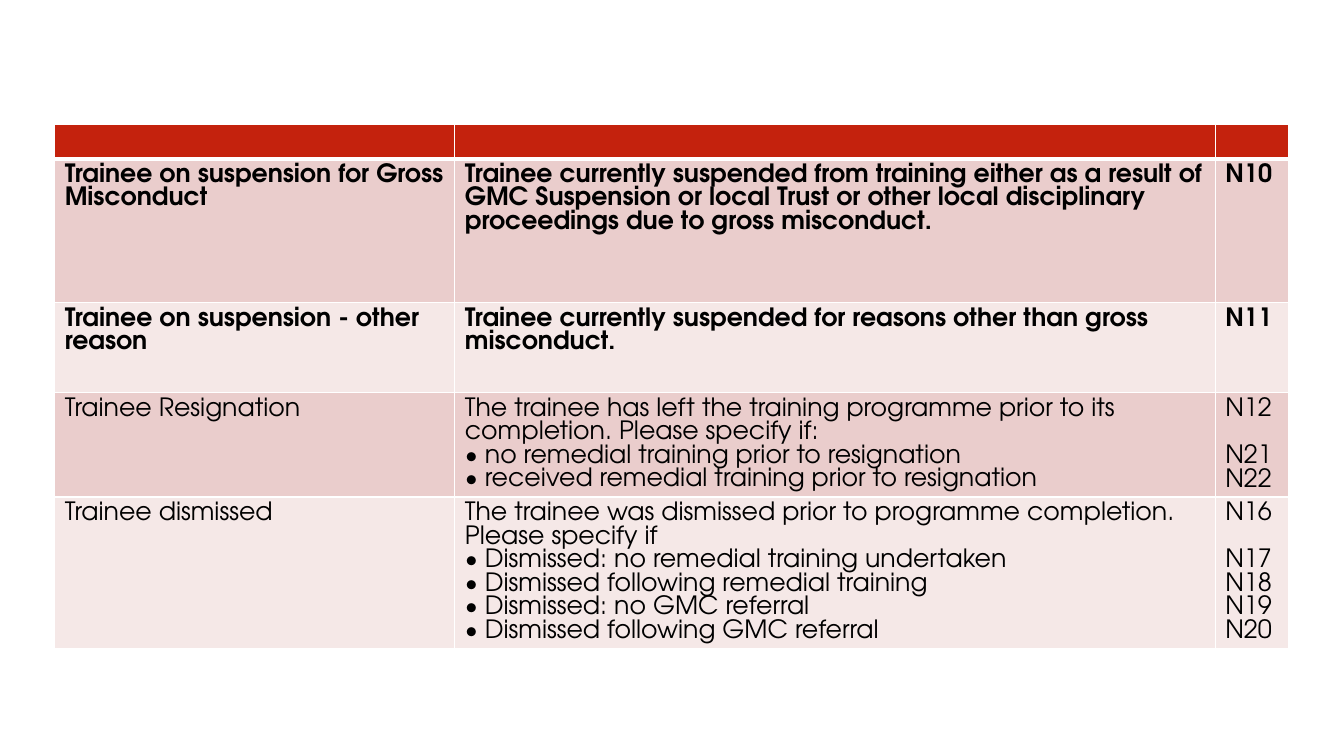
from pptx import Presentation
from pptx.dml.color import RGBColor
from pptx.oxml.ns import qn
from pptx.util import Pt
from lxml.etree import SubElement

HEADER_RED = RGBColor(0xC4, 0x22, 0x0D)
BANDS = [RGBColor(0xEA, 0xCD, 0xCC), RGBColor(0xF5, 0xE8, 0xE7)]
BLACK = RGBColor(0, 0, 0)
WHITE = RGBColor(0xFF, 0xFF, 0xFF)
FONT = "TeX Gyre Adventor"
FONT_SIZE = 18
LINE_HEIGHT = 16.9
BULLET_INDENT = 14.3

COLUMN_WIDTHS = [285.8, 543.2, 52.6]
HEADER_HEIGHT = 24.2
# height, bold, status, description, bullets, code, codes of the bullets
STATUSES = [
    (102.8, True, "Trainee on suspension for Gross Misconduct",
     "Trainee currently suspended from training either as a result of GMC Suspension "
     "or local Trust or other local disciplinary proceedings due to gross misconduct.",
     [], "N10", ""),
    (64.3, True, "Trainee on suspension - other reason",
     "Trainee currently suspended for reasons other than gross misconduct.",
     [], "N11", ""),
    (74.6, False, "Trainee Resignation",
     "The trainee has left the training programme prior to its completion. "
     "Please specify if:",
     ["no remedial training prior to resignation",
      "received remedial training prior to resignation"], "N12", "N21 N22"),
    (107.2, False, "Trainee dismissed",
     "The trainee was dismissed prior to programme completion. Please specify if",
     ["Dismissed: no remedial training undertaken",
      "Dismissed following remedial training",
      "Dismissed: no GMC referral",
      "Dismissed following GMC referral"], "N16", "N17 N18 N19 N20"),
]


def style_cell(cell, fill, bottom_width=1):
    """Fill a cell and give it white borders."""
    properties = cell._tc.get_or_add_tcPr()
    for side, width in (("L", 1), ("R", 1), ("T", 1), ("B", bottom_width)):
        border = SubElement(properties, qn(f"a:ln{side}"), w=str(Pt(width)))
        color = SubElement(border, qn("a:solidFill"))
        SubElement(color, qn("a:srgbClr"), val=str(WHITE))
    cell.fill.solid()
    cell.fill.fore_color.rgb = fill


def write_line(paragraph, text, bold, bulleted=False):
    if bulleted:
        properties = paragraph._p.get_or_add_pPr()
        properties.set("marL", str(Pt(BULLET_INDENT)))
        properties.set("indent", str(-Pt(BULLET_INDENT)))
        SubElement(properties, qn("a:buFont"), typeface=FONT)
        SubElement(properties, qn("a:buChar"), char="•")
    run = paragraph.add_run()
    run.text = text
    text_format = {"name": FONT, "size": Pt(FONT_SIZE), "bold": bold}
    for attribute, value in text_format.items():
        setattr(run.font, attribute, value)
    run.font.color.rgb = BLACK


prs = Presentation()
prs.slide_width, prs.slide_height = Pt(960), Pt(540)
slide = prs.slides.add_slide(prs.slide_layouts[6])

heights = [HEADER_HEIGHT] + [status[0] for status in STATUSES]
status_table = slide.shapes.add_table(
    len(heights), len(COLUMN_WIDTHS), Pt(39.1), Pt(89.2),
    Pt(sum(COLUMN_WIDTHS)), Pt(sum(heights))).table
for column, width in zip(status_table.columns, COLUMN_WIDTHS):
    column.width = Pt(width)
for row, height in zip(status_table.rows, heights):
    row.height = Pt(height)

for header in status_table.rows[0].cells:
    style_cell(header, HEADER_RED, bottom_width=3)
    blank = header.text_frame.paragraphs[0]
    SubElement(blank._p, qn("a:endParaRPr"), sz="900")

for index, (_, bold, status, description, bullets, code, bullet_codes) in enumerate(STATUSES):
    cells = list(status_table.rows[index + 1].cells)
    for cell, text in zip(cells, (status, description, code)):
        style_cell(cell, BANDS[index % 2])
        write_line(cell.text_frame.paragraphs[0], text, bold)
    for bullet in bullets:
        write_line(cells[1].text_frame.add_paragraph(), bullet, bold, bulleted=True)
    if bullet_codes:
        codes = cells[2].text_frame.add_paragraph()
        codes.space_before = Pt(LINE_HEIGHT)
        write_line(codes, bullet_codes, bold)

prs.save("out.pptx")
